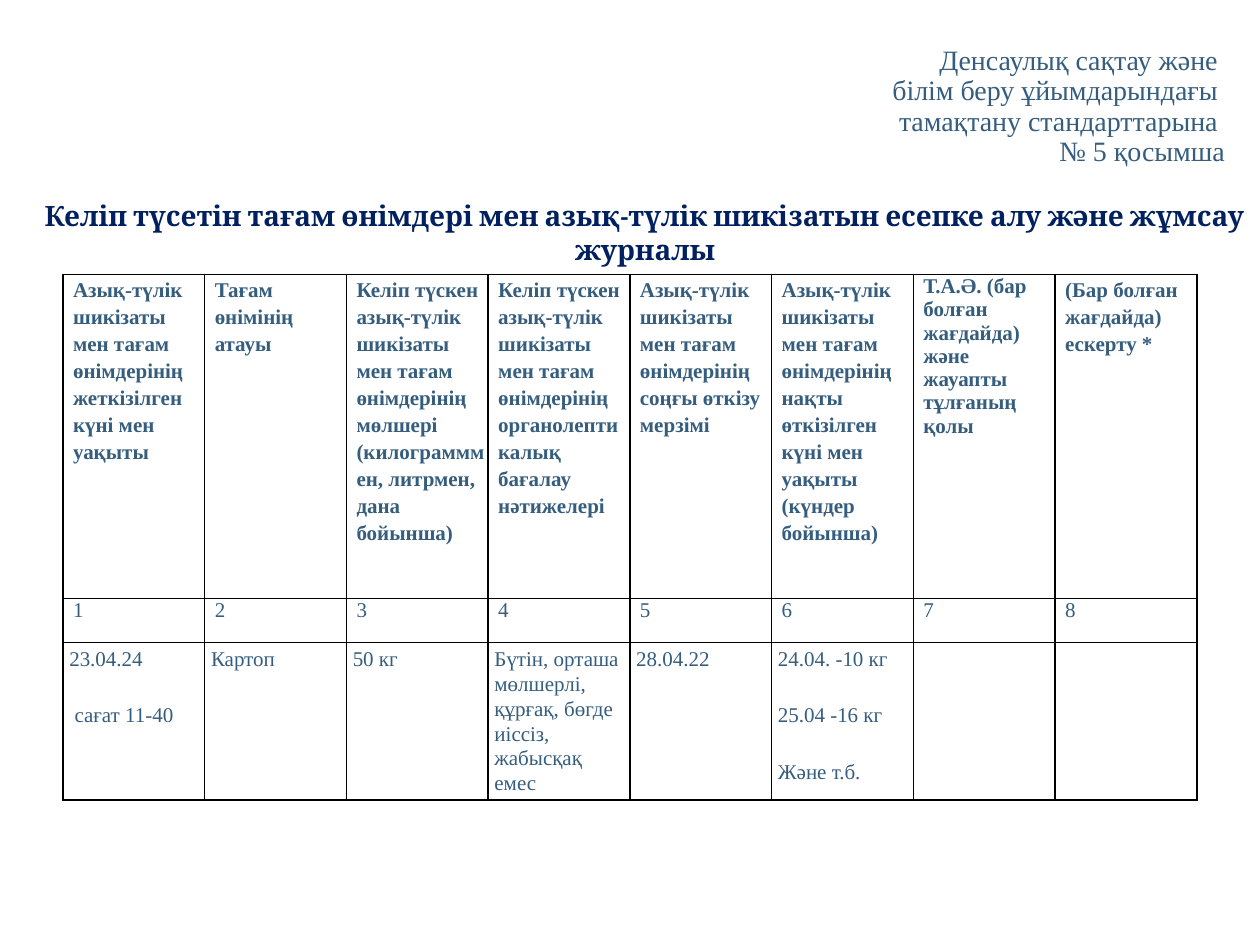
from copy import deepcopy
from pptx import Presentation
from pptx.dml.color import RGBColor
from pptx.enum.text import MSO_ANCHOR, PP_ALIGN
from pptx.oxml import parse_xml
from pptx.oxml.ns import nsdecls, qn
from pptx.util import Inches, Pt

THEME = {
    "ink": "355D7E", "navy": "002060", "line": "000000",
    "body": "Times New Roman", "head": "Cambria",
    "big": 16, "small": 12, "rule": 1,
}

NOTE = ("Денсаулық сақтау және \vбілім беру ұйымдарындағы \v"
        "тамақтану стандарттарына \v№ 5 қосымша")
TITLE = ("Келіп түсетін тағам өнімдері мен азық-түлік шикізатын "
         "есепке алу және жұмсау журналы")
HEADS = [
    "Азық-түлік шикізаты мен тағам өнімдерінің жеткізілген күні мен уақыты",
    "Тағам өнімінің атауы",
    "Келіп түскен азық-түлік шикізаты мен тағам өнімдерінің мөлшері "
    "(килограмммен, литрмен, дана бойынша)",
    "Келіп түскен азық-түлік шикізаты мен тағам өнімдерінің "
    "органолептикалық бағалау нәтижелері",
    "Азық-түлік шикізаты мен тағам өнімдерінің соңғы өткізу мерзімі",
    "Азық-түлік шикізаты мен тағам өнімдерінің нақты өткізілген күні "
    "мен уақыты (күндер бойынша)",
    "Т.А.Ә. (бар болған жағдайда) және жауапты тұлғаның қолы",
    "(Бар болған жағдайда) ескерту *",
]
TIGHT = 6
ENTRY = [
    ["23.04.24", " сағат 11-40"],
    ["Картоп"],
    ["50 кг"],
    ["Бүтін, орташа мөлшерлі, құрғақ, бөгде иіссіз, жабысқақ емес"],
    ["28.04.22"],
    ["24.04. -10 кг", "25.04 -16 кг", "Және т.б."],
    [], [],
]
ROWS = [2.57, 0.35, 1.25]
WIDE = 9


def write(frame, *lines, size=THEME["small"], face=THEME["body"],
          color=THEME["ink"], bold=False, align=PP_ALIGN.LEFT,
          space=None, before=0, after=0):
    for i, line in enumerate(lines):
        para = frame.add_paragraph() if i else frame.paragraphs[0]
        para.text = line
        para.alignment = align
        para.line_spacing = space
        para.space_before, para.space_after = Pt(before), Pt(after)
        for run in para.runs:
            font = run.font
            font.size, font.name, font.bold = Pt(size), face, bold
            font.color.rgb = RGBColor.from_string(color)
        for gap in para._p.findall(qn("a:br")):
            gap.append(deepcopy(para.runs[0]._r.rPr))


def add_box(slide, *place):
    frame = slide.shapes.add_textbox(*map(Inches, place)).text_frame
    frame.word_wrap = True
    return frame


def set_cell(cell, left, top, right):
    cell.margin_left, cell.margin_right = Inches(left), Inches(right)
    cell.margin_top = cell.margin_bottom = Inches(top)
    cell.vertical_anchor = MSO_ANCHOR.TOP
    props = cell._tc.get_or_add_tcPr()
    for side in ("lnL", "lnR", "lnT", "lnB"):
        props.append(parse_xml(
            f'<a:{side} {nsdecls("a")} w="{Pt(THEME["rule"])}"><a:solidFill>'
            f'<a:srgbClr val="{THEME["line"]}"/></a:solidFill></a:{side}>'))
    cell.fill.background()


def add_grid(slide):
    count = len(HEADS)
    table = slide.shapes.add_table(
        len(ROWS), count, Inches(0.5), Inches(2.18),
        Inches(WIDE), Inches(sum(ROWS))).table
    table.first_row = table.horz_banding = False
    for row, high in zip(table.rows, ROWS):
        row.height = Inches(high)
    for i, (head, lines) in enumerate(zip(HEADS, ENTRY)):
        table.columns[i].width = Inches(WIDE / count)
        top, mid, low = (table.cell(r, i) for r in range(len(ROWS)))
        for cell in (top, mid):
            set_cell(cell, 0.08, 0, 0)
        set_cell(low, 0.05, 0.03, 0.05)
        write(top.text_frame, head, bold=True, before=2.5,
              space=1 if i == TIGHT else 1.16)
        write(mid.text_frame, str(i + 1), before=2.5)
        write(low.text_frame, *lines, space=Pt(14.2), after=18)


def main():
    deck = Presentation()
    deck.slide_width, deck.slide_height = Inches(10), Inches(7.5)
    slide = deck.slides.add_slide(deck.slide_layouts[6])
    note = add_box(slide, 0.91, 0.18, 8.91, 1.8)
    note.margin_top = Inches(0.19)
    write(note, NOTE, size=THEME["big"], align=PP_ALIGN.RIGHT, space=0.9)
    add_grid(slide)
    write(add_box(slide, 0.24, 1.53, 9.76, 0.64), TITLE, size=THEME["big"],
          face=THEME["head"], color=THEME["navy"], bold=True,
          align=PP_ALIGN.CENTER)
    deck.save("out.pptx")


if __name__ == "__main__":
    main()
